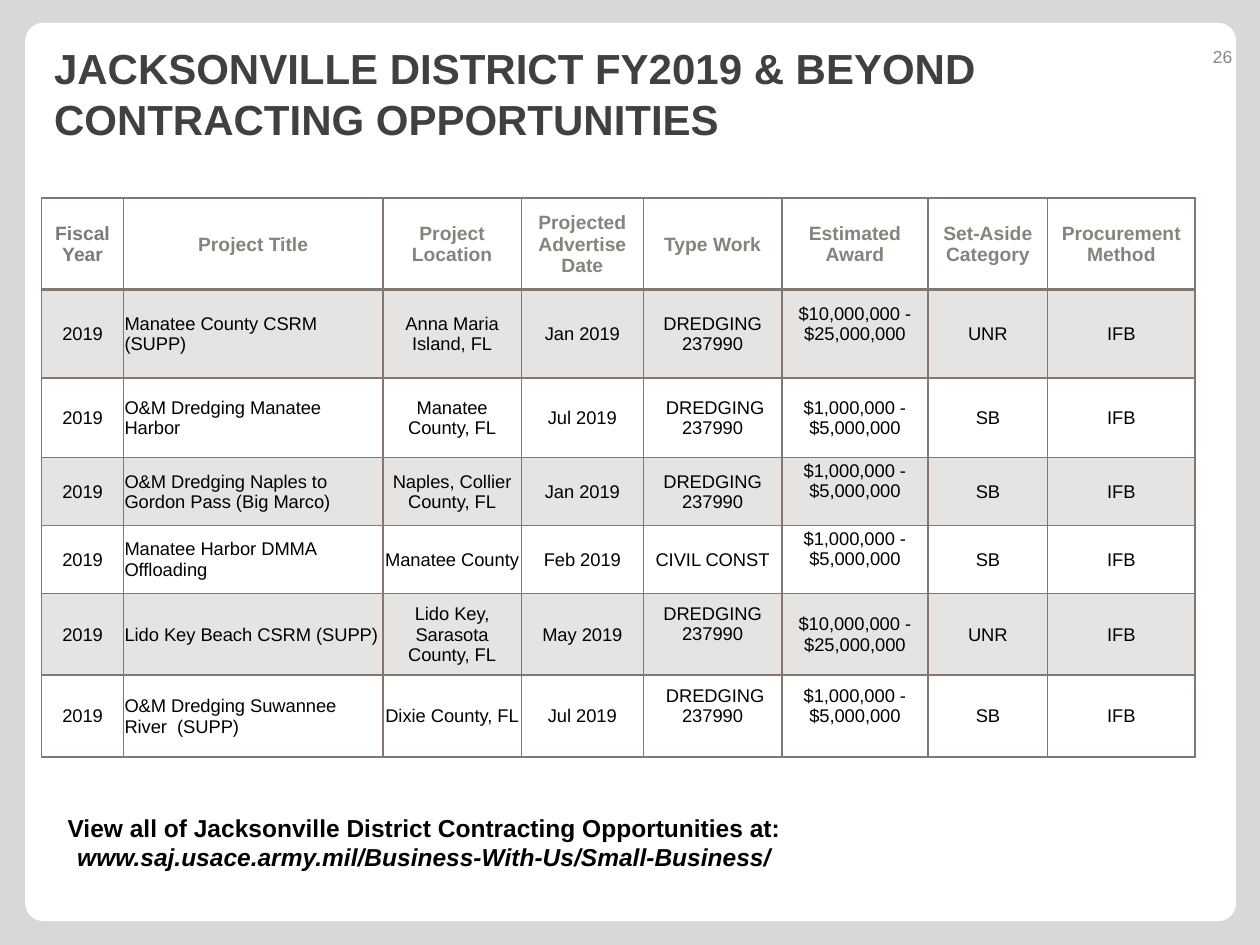
"""Build the Jacksonville District contracting opportunities slide."""
from dataclasses import dataclass

from lxml.etree import SubElement
from pptx import Presentation
from pptx.dml.color import RGBColor
from pptx.enum.shapes import MSO_SHAPE
from pptx.enum.text import MSO_ANCHOR, PP_ALIGN
from pptx.oxml.ns import qn
from pptx.util import Cm, Pt


@dataclass(frozen=True)
class Theme:
    font: str = "Arial"
    backdrop: str = "D8D8D8"
    card: str = "FFFFFF"
    title: str = "404040"
    number: str = "898989"
    year_header: str = "7A7A7A"
    header: str = "83847A"
    body: str = "000000"
    rule: str = "82786F"
    title_size: float = 24
    number_size: float = 10
    header_size: float = 11
    body_size: float = 10.5
    footer_size: float = 14


theme = Theme()


def write(frame, text, *, size, color, bold=False, italic=False,
          align=PP_ALIGN.LEFT, anchor=MSO_ANCHOR.MIDDLE, new=False):
    frame.word_wrap = True
    frame.vertical_anchor = anchor
    para = frame.add_paragraph() if new else frame.paragraphs[0]
    para.alignment = align
    span = para.add_run()
    span.text = text
    span.font.name = theme.font
    span.font.size = Pt(size)
    span.font.bold = bold
    span.font.italic = italic
    span.font.color.rgb = RGBColor.from_string(color)


def draw_border(cell, side, width):
    line = SubElement(cell._tc.get_or_add_tcPr(), qn(f"a:ln{side}"), w=str(Pt(width)))
    fill = SubElement(line, qn("a:solidFill"))
    SubElement(fill, qn("a:srgbClr"), val=theme.rule)


deck = Presentation()
deck.slide_width, deck.slide_height = Cm(25.4), Cm(19.05)
page = deck.slides.add_slide(deck.slide_layouts[6])
page.background.fill.solid()
page.background.fill.fore_color.rgb = RGBColor.from_string(theme.backdrop)

card = page.shapes.add_shape(
    MSO_SHAPE.ROUNDED_RECTANGLE, Cm(0.51), Cm(0.46), Cm(24.41), Cm(18.11))
card.adjustments[0] = 0.02
card.shadow.inherit = False
card.fill.solid()
card.fill.fore_color.rgb = RGBColor.from_string(theme.card)
card.line.fill.background()

title_box = page.shapes.add_textbox(Cm(0.84), Cm(0.76), Cm(23.29), Cm(2.24))
write(title_box.text_frame, "JACKSONVILLE DISTRICT FY2019 & BEYOND CONTRACTING OPPORTUNITIES",
      size=theme.title_size, color=theme.title, bold=True)

number_box = page.shapes.add_textbox(Cm(23.06), Cm(0.64), Cm(2.03), Cm(1.02))
write(number_box.text_frame, "26", size=theme.number_size, color=theme.number,
      align=PP_ALIGN.RIGHT)

headers = ["Fiscal Year", "Project Title", "Project Location", "Projected Advertise Date",
           "Type Work", "Estimated Award", "Set-Aside Category", "Procurement Method"]
small_award = "$1,000,000 - $5,000,000"
large_award = "$10,000,000 - $25,000,000"
projects = [
    ("Manatee County CSRM (SUPP)", "Anna Maria Island, FL", "Jan 2019",
     "DREDGING 237990", large_award, "UNR"),
    ("O&M Dredging Manatee Harbor", "Manatee County, FL", "Jul 2019",
     " DREDGING 237990", small_award, "SB"),
    ("O&M Dredging Naples to Gordon Pass (Big Marco)", "Naples, Collier County, FL", "Jan 2019",
     "DREDGING 237990", small_award, "SB"),
    ("Manatee Harbor DMMA Offloading", "Manatee County", "Feb 2019",
     "CIVIL CONST", small_award, "SB"),
    ("Lido Key Beach CSRM (SUPP)", "Lido Key, Sarasota County, FL", "May 2019",
     "DREDGING 237990", large_award, "UNR"),
    ("O&M Dredging Suwannee River  (SUPP)", "Dixie County, FL", "Jul 2019",
     " DREDGING 237990", small_award, "SB"),
]
rows = [headers] + [["2019", *project, "IFB"] for project in projects]
column_widths = [1.65, 5.23, 2.79, 2.46, 2.79, 2.95, 2.41, 2.97]
row_heights = [1.85, 1.78, 1.6, 1.37, 1.37, 1.65, 1.65]
raised_cells = {(1, 5), (3, 5), (4, 5), (5, 4), (6, 4), (6, 5)}

table = page.shapes.add_table(
    len(rows), len(headers), Cm(0.84), Cm(3.99),
    Cm(sum(column_widths)), Cm(sum(row_heights))).table
table.horz_banding = False
for column, width in zip(table.columns, column_widths):
    column.width = Cm(width)
for row, height in zip(table.rows, row_heights):
    row.height = Cm(height)

for r, texts in enumerate(rows):
    is_header = r == 0
    for c, text in enumerate(texts):
        cell = table.cell(r, c)
        cell.margin_left = cell.margin_right = cell.margin_top = Cm(0.02)
        cell.margin_bottom = Cm(0.42 if (r, c) in raised_cells else 0)
        cell.vertical_anchor = MSO_ANCHOR.MIDDLE
        for side in "LRTB":
            heavy = (r, side) in {(0, "B"), (1, "T")}
            draw_border(cell, side, 2 if heavy else 1)
        if r % 2:
            cell.fill.solid()
            cell.fill.fore_color.rgb = RGBColor.from_string(theme.rule)
            tint = cell._tc.tcPr.find(f"{qn('a:solidFill')}/{qn('a:srgbClr')}")
            SubElement(tint, qn("a:alpha"), val="20000")
        else:
            cell.fill.background()
        header_color = theme.header if c else theme.year_header
        write(cell.text_frame, text, bold=is_header,
              size=theme.header_size if is_header else theme.body_size,
              color=header_color if is_header else theme.body,
              align=PP_ALIGN.LEFT if c == 1 and not is_header else PP_ALIGN.CENTER)

footer_box = page.shapes.add_textbox(Cm(-0.64), Cm(16.26), Cm(18.39), Cm(1.45))
footer_lines = ["View all of Jacksonville District Contracting Opportunities at:",
                "www.saj.usace.army.mil/Business-With-Us/Small-Business/"]
for i, text in enumerate(footer_lines):
    write(footer_box.text_frame, text, size=theme.footer_size, color=theme.body, bold=True,
          italic=i == 1, align=PP_ALIGN.CENTER, anchor=MSO_ANCHOR.TOP, new=i > 0)

deck.save("out.pptx")
